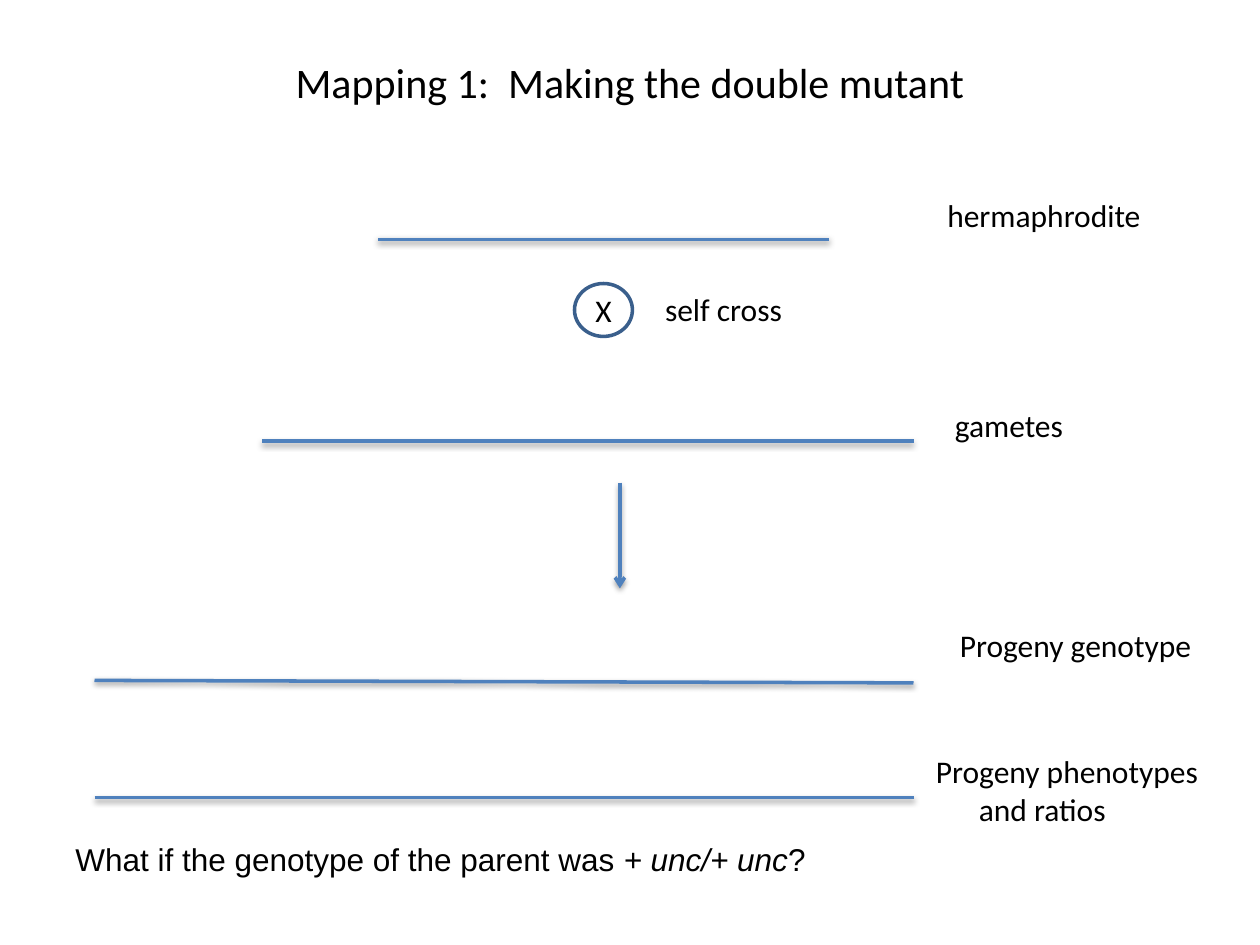
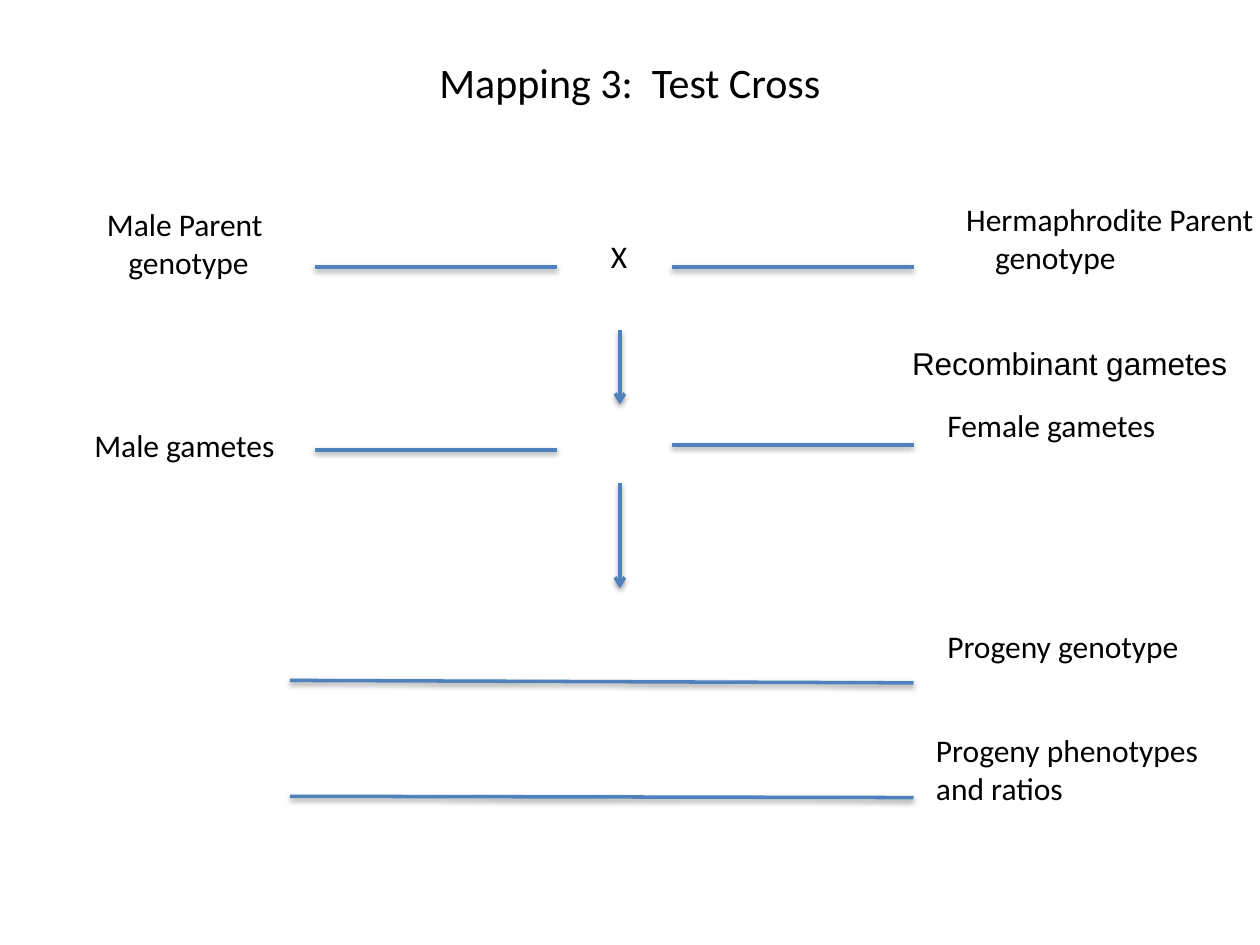
import pptx
import pptx.util
import pptx.dml.color
import pptx.enum.shapes
import pptx.enum.text
import pptx.oxml.ns
import lxml.etree

Inches = pptx.util.Inches
Pt = pptx.util.Pt
BLACK = pptx.dml.color.RGBColor(0x00, 0x00, 0x00)
LINE_BLUE = pptx.dml.color.RGBColor(0x4F, 0x81, 0xBD)
RING_BLUE = pptx.dml.color.RGBColor(0x3A, 0x5F, 0x8C)
CENTER = pptx.enum.text.PP_ALIGN.CENTER
MIDDLE = pptx.enum.text.MSO_ANCHOR.MIDDLE
RIGHT_END = 7.25
ARROW_X = 4.92


def add_run(paragraph, text, font="Calibri", size=18, italic=False):
    run = paragraph.add_run()
    run.text = text
    run.font.name = font
    run.font.size = Pt(size)
    run.font.italic = italic
    run.font.color.rgb = BLACK


def add_label(slide, left, top, width, lines, font="Calibri", indent=0):
    height = 0.4 if len(lines) == 1 else 0.71
    label = slide.shapes.add_textbox(Inches(left), Inches(top), Inches(width), Inches(height))
    frame = label.text_frame
    frame.word_wrap = False
    for number, line in enumerate(lines):
        paragraph = frame.add_paragraph() if number else frame.paragraphs[0]
        if number and indent:
            paragraph._p.get_or_add_pPr().set("marL", str(Inches(indent)))
        add_run(paragraph, line, font)
    return frame.paragraphs[0]


deck = pptx.Presentation()
deck.slide_width = Inches(10)
deck.slide_height = Inches(7.5)

titles = ["Mapping 1:  Making the double mutant", "Mapping 3:  Test Cross"]
answer_lines = [
    [(3, 1.9, 6.58, 1.9), (2.08, 3.5, RIGHT_END, 3.5),
     (0.75, 5.4, RIGHT_END, 5.42), (0.75, 6.33, RIGHT_END, 6.33)],
    [(2.5, 2.12, 4.42, 2.12), (5.33, 2.12, RIGHT_END, 2.12),
     (2.5, 3.57, 4.42, 3.57), (5.33, 3.53, RIGHT_END, 3.53),
     (2.3, 5.4, RIGHT_END, 5.42), (2.3, 6.32, RIGHT_END, 6.33)],
]
step_arrows = [[(3.83, 4.67)], [(2.62, 3.21), (3.83, 4.67)]]

slides = []
for title, answers, steps in zip(titles, answer_lines, step_arrows):
    slide = deck.slides.add_slide(deck.slide_layouts[6])
    slides.append(slide)
    heading = slide.shapes.add_textbox(Inches(0.5), Inches(0.3), Inches(9), Inches(0.7)).text_frame
    heading.word_wrap = True
    heading.vertical_anchor = MIDDLE
    heading.paragraphs[0].alignment = CENTER
    add_run(heading.paragraphs[0], title, size=24)

    arrows = [(ARROW_X, start, ARROW_X, end) for start, end in steps]
    for ends in answers + arrows:
        connector = slide.shapes.add_connector(
            pptx.enum.shapes.MSO_CONNECTOR.STRAIGHT, *[Inches(value) for value in ends])
        connector.line.color.rgb = LINE_BLUE
        connector.line.width = Pt(2)
        if ends in arrows:
            outline = connector.line._get_or_add_ln()
            lxml.etree.SubElement(outline, pptx.oxml.ns.qn("a:tailEnd"), type="arrow")

double_mutant, test_cross = slides

self_cross = double_mutant.shapes.add_shape(
    pptx.enum.shapes.MSO_SHAPE.OVAL, Inches(4.56), Inches(2.25), Inches(0.46), Inches(0.42))
self_cross.shadow.inherit = False
self_cross.fill.background()
self_cross.line.color.rgb = RING_BLUE
self_cross.line.width = Pt(2)
cross_frame = self_cross.text_frame
cross_frame.margin_left = cross_frame.margin_right = 0
cross_frame.margin_top = cross_frame.margin_bottom = 0
cross_frame.word_wrap = False
cross_frame.vertical_anchor = MIDDLE
cross_frame.paragraphs[0].alignment = CENTER
add_run(cross_frame.paragraphs[0], "X")

add_label(double_mutant, 7.42, 1.51, 1.75, ["hermaphrodite"])
add_label(double_mutant, 5.18, 2.25, 1.14, ["self cross"])
add_label(double_mutant, 7.48, 3.17, 1.07, ["gametes"])
add_label(double_mutant, 7.52, 4.92, 2.06, ["Progeny genotype"])
add_label(double_mutant, 7.33, 5.92, 2.36, ["Progeny phenotypes", "and ratios"], indent=0.34)
question = add_label(double_mutant, 0.5, 6.62, 6.05,
                     ["What if the genotype of the parent was "], "Arial")
add_run(question, "+ unc/+ unc", "Arial", italic=True)
add_run(question, "?", "Arial")

add_label(test_cross, 7.57, 1.54, 2.5, ["Hermaphrodite Parent", "genotype"], indent=0.23)
add_label(test_cross, 0.75, 1.58, 1.45, ["Male Parent", "genotype"], indent=0.17)
add_label(test_cross, 4.75, 1.83, 0.33, ["X"])
add_label(test_cross, 0.65, 3.33, 1.65, ["Male gametes"])
add_label(test_cross, 7.42, 3.17, 1.87, ["Female gametes"])
add_label(test_cross, 7.42, 4.93, 2.06, ["Progeny genotype"])
add_label(test_cross, 7.33, 5.75, 2.31, ["Progeny phenotypes", "and ratios"])
add_label(test_cross, 7.14, 2.68, 2.73, ["Recombinant gametes"], "Arial")

deck.save("out.pptx")
